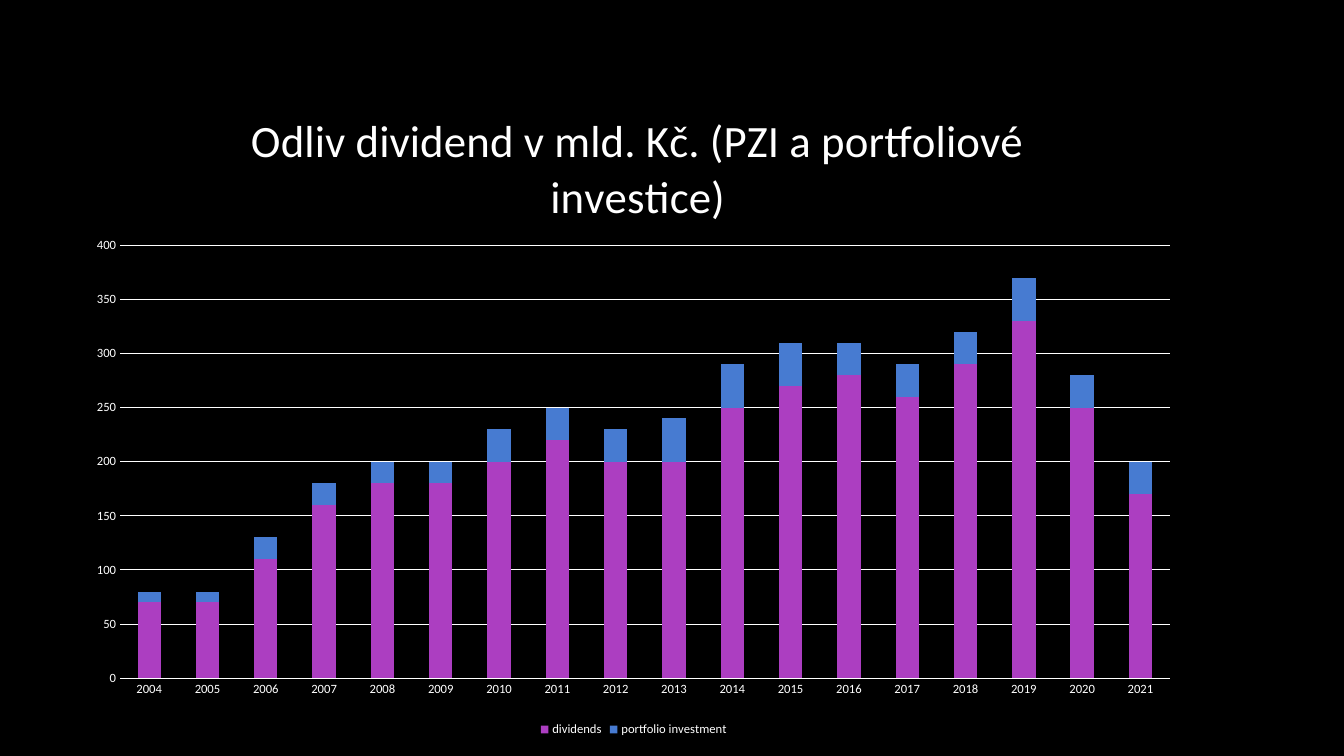
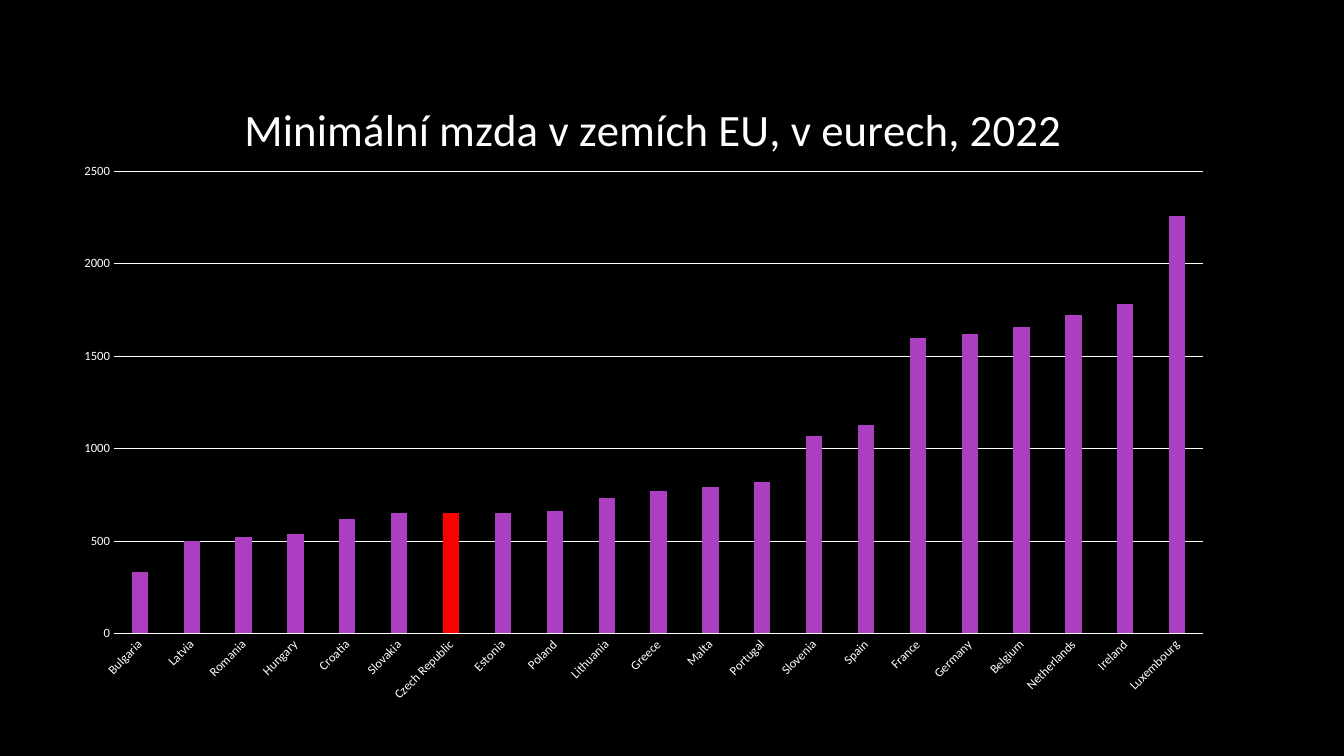
"""Build two dark slides with column charts of dividends and minimum wages."""
from dataclasses import dataclass
from typing import Any, Optional

from lxml import etree
from pptx import Presentation
from pptx.chart.axis import CategoryAxis, ValueAxis
from pptx.chart.chart import Chart
from pptx.chart.data import CategoryChartData
from pptx.dml.color import RGBColor
from pptx.enum.chart import XL_CHART_TYPE, XL_LEGEND_POSITION, XL_TICK_MARK
from pptx.oxml.ns import qn
from pptx.util import Cm, Pt

STACKED = XL_CHART_TYPE.COLUMN_STACKED
CLUSTERED = XL_CHART_TYPE.COLUMN_CLUSTERED
LEGEND_BOTTOM = XL_LEGEND_POSITION.BOTTOM
NO_TICK = XL_TICK_MARK.NONE
BLANK_LAYOUT = 6


@dataclass(frozen=True)
class Theme:
    background: RGBColor = RGBColor(0, 0, 0)
    text: RGBColor = RGBColor(255, 255, 255)
    highlight: RGBColor = RGBColor(255, 0, 0)
    series: tuple[RGBColor, ...] = (RGBColor(0xAC, 0x3E, 0xC1), RGBColor(0x47, 0x7B, 0xD1))
    font: str = "Calibri"
    title_size: int = 32
    chart_size: int = 10
    label_size: int = 9
    line_width: float = 0.75


@dataclass(frozen=True)
class Series:
    name: str
    values: list[int]


@dataclass(frozen=True)
class ChartSlide:
    title: str
    kind: XL_CHART_TYPE
    box: tuple[float, float, float, float]
    title_place: dict[str, float]
    plot_place: dict[str, float]
    categories: list[str]
    series: list[Series]
    plot_format: dict[str, int]
    value_format: dict[str, int]
    label_rotation: int = 0
    has_legend: bool = False
    highlighted: Optional[int] = None


THEME = Theme()

CHART_SLIDES = [
    ChartSlide(
        title="Odliv dividend v mld. Kč. (PZI a portfoliové investice)",
        kind=STACKED,
        box=(1.9, 1.7, 28.14, 16.97),
        title_place={"x": 0.15, "y": 0.05},
        plot_place={"x": 0.04, "y": 0.264, "w": 0.94, "h": 0.643},
        categories=[str(year) for year in range(2004, 2022)],
        series=[
            Series("dividends", [70, 70, 110, 160, 180, 180, 200, 220, 200,
                                 200, 250, 270, 280, 260, 290, 330, 250, 170]),
            Series("portfolio investment", [10, 10, 20, 20, 20, 20, 30, 30, 30,
                                            40, 40, 40, 30, 30, 30, 40, 30, 30]),
        ],
        plot_format={"gap_width": 150, "overlap": 100},
        value_format={"maximum_scale": 400, "major_unit": 50},
        has_legend=True,
    ),
    ChartSlide(
        title="Minimální mzda v zemích EU, v eurech, 2022",
        kind=CLUSTERED,
        box=(1.55, 1.7, 29.36, 16.36),
        title_place={"x": 0.15, "y": 0.035},
        plot_place={"x": 0.045, "y": 0.16, "w": 0.935, "h": 0.712},
        categories=["Bulgaria", "Latvia", "Romania", "Hungary", "Croatia", "Slovakia",
                    "Czech Republic", "Estonia", "Poland", "Lithuania", "Greece",
                    "Malta", "Portugal", "Slovenia", "Spain", "France", "Germany",
                    "Belgium", "Netherlands", "Ireland", "Luxembourg"],
        series=[
            Series("Series 1", [330, 500, 520, 540, 620, 650, 650, 650, 660, 730, 770,
                                790, 820, 1070, 1130, 1600, 1620, 1660, 1720, 1780, 2260]),
        ],
        plot_format={"gap_width": 219, "overlap": -27},
        value_format={"maximum_scale": 2500, "major_unit": 500},
        label_rotation=-45,
        highlighted=6,
    ),
]


def set_attributes(target: Any, values: dict[str, Any]) -> None:
    for name, value in values.items():
        setattr(target, name, value)


def style_font(font: Any, size: int) -> None:
    set_attributes(font, {"name": THEME.font, "size": Pt(size), "bold": False})
    font.color.rgb = THEME.text


def style_line(line: Any) -> None:
    line.color.rgb = THEME.text
    line.width = Pt(THEME.line_width)


def place_part(part: Any, index: int, place: dict[str, float]) -> None:
    for old_layout in part.findall(qn("c:layout")):
        part.remove(old_layout)
    layout = etree.Element(qn("c:layout"))
    manual = etree.SubElement(layout, qn("c:manualLayout"))
    if "w" in place:
        etree.SubElement(manual, qn("c:layoutTarget"), val="inner")
    for axis in "xy":
        etree.SubElement(manual, qn(f"c:{axis}Mode"), val="edge")
    for name, value in place.items():
        etree.SubElement(manual, qn(f"c:{name}"), val=str(value))
    part.insert(index, layout)


def style_title(chart: Chart, chart_slide: ChartSlide) -> None:
    chart.has_title = True
    chart.chart_title.include_in_layout = False
    paragraph = chart.chart_title.text_frame.paragraphs[0]
    run = paragraph.add_run()
    run.text = chart_slide.title
    for font in (paragraph.font, run.font):
        style_font(font, THEME.title_size)
    place_part(chart.chart_title._element, 1, chart_slide.title_place)


def style_axes(category_axis: CategoryAxis, value_axis: ValueAxis, chart_slide: ChartSlide) -> None:
    for axis in (category_axis, value_axis):
        set_attributes(axis, {"major_tick_mark": NO_TICK, "minor_tick_mark": NO_TICK})
        style_font(axis.tick_labels.font, THEME.label_size)
    category_axis.has_major_gridlines = False
    style_line(category_axis.format.line)
    body = category_axis._element.find(qn("c:txPr")).find(qn("a:bodyPr"))
    body.set("rot", str(chart_slide.label_rotation * 60000))
    body.set("vert", "horz")
    set_attributes(value_axis, {"minimum_scale": 0, "has_major_gridlines": True}
                   | chart_slide.value_format)
    value_axis.format.line.fill.background()
    style_line(value_axis.major_gridlines.format.line)


def style_series(chart: Chart, chart_slide: ChartSlide) -> None:
    plot = chart.plots[0]
    set_attributes(plot, {"vary_by_categories": False} | chart_slide.plot_format)
    for series, color in zip(plot.series, THEME.series):
        series.invert_if_negative = False
        series.format.fill.solid()
        series.format.fill.fore_color.rgb = color
    if chart_slide.highlighted is not None:
        fill = plot.series[0].points[chart_slide.highlighted].format.fill
        fill.solid()
        fill.fore_color.rgb = THEME.highlight


def add_chart_slide(presentation: Any, chart_slide: ChartSlide) -> None:
    slide = presentation.slides.add_slide(presentation.slide_layouts[BLANK_LAYOUT])
    slide.background.fill.solid()
    slide.background.fill.fore_color.rgb = THEME.background
    data = CategoryChartData()
    data.categories = chart_slide.categories
    for series in chart_slide.series:
        data.add_series(series.name, series.values)
    box = [Cm(length) for length in chart_slide.box]
    chart = slide.shapes.add_chart(chart_slide.kind, *box, data).chart
    style_font(chart.font, THEME.chart_size)
    style_title(chart, chart_slide)
    style_axes(chart.category_axis, chart.value_axis, chart_slide)
    style_series(chart, chart_slide)
    chart.has_legend = chart_slide.has_legend
    if chart_slide.has_legend:
        set_attributes(chart.legend, {"position": LEGEND_BOTTOM, "include_in_layout": False})
        style_font(chart.legend.font, THEME.label_size)
    plot_area = chart.plots[0]._element.getparent()
    place_part(plot_area, 0, chart_slide.plot_place)


def main() -> None:
    presentation = Presentation()
    set_attributes(presentation, {"slide_width": Cm(33.87), "slide_height": Cm(19.05)})
    for chart_slide in CHART_SLIDES:
        add_chart_slide(presentation, chart_slide)
    presentation.save("out.pptx")


if __name__ == "__main__":
    main()
